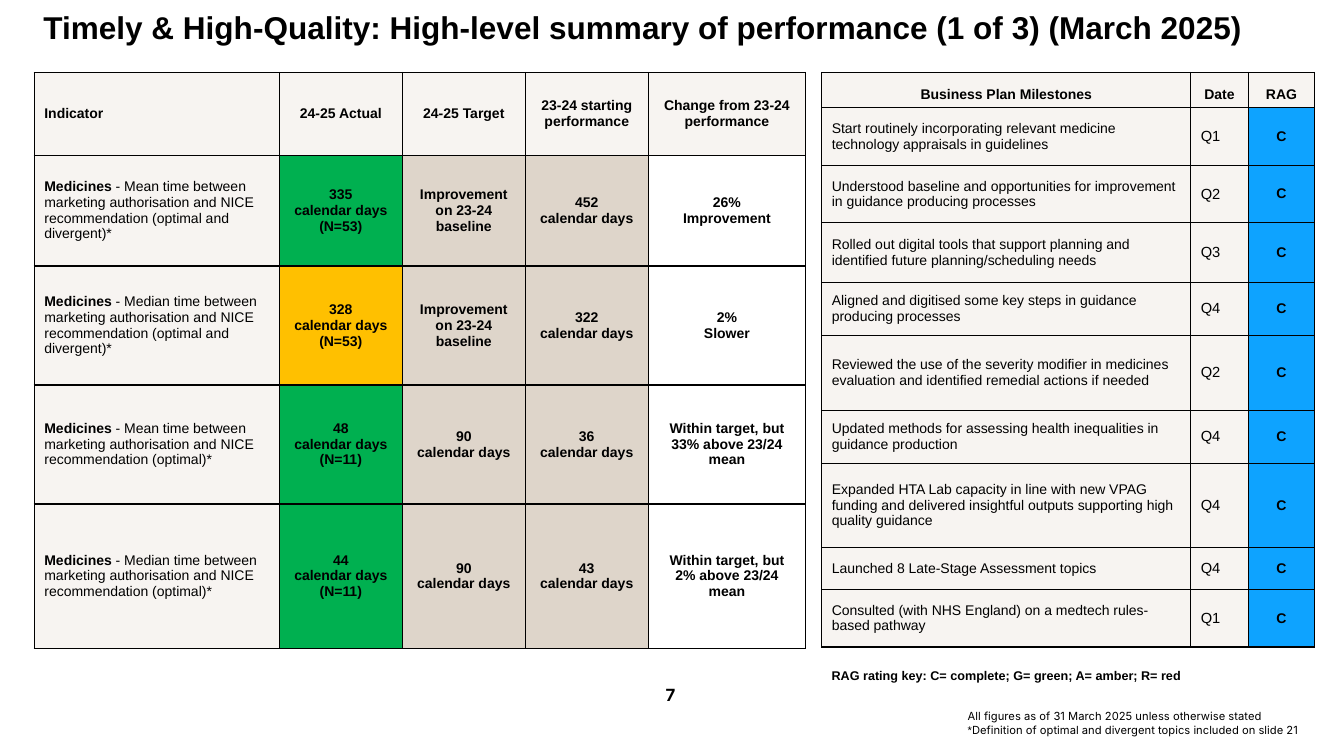
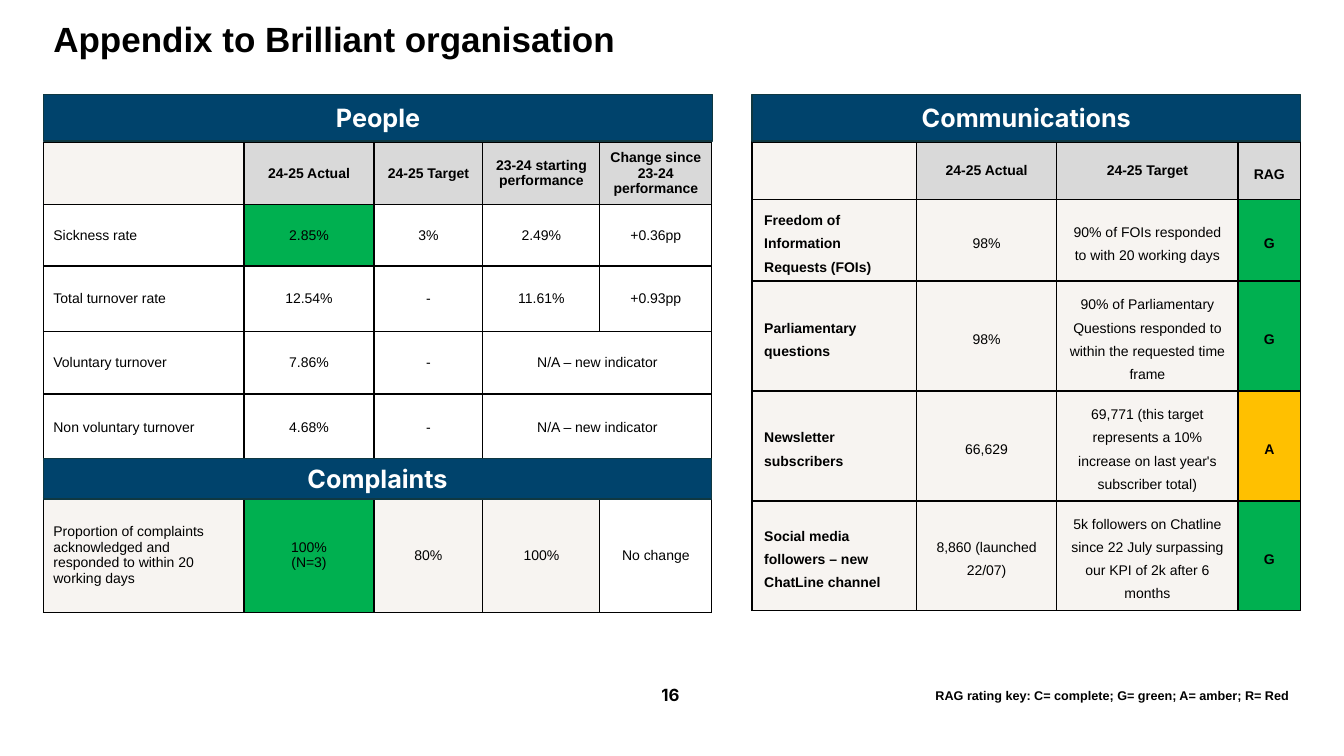
from lxml import etree
from pptx import Presentation
from pptx.dml.color import RGBColor
from pptx.enum.shapes import MSO_SHAPE
from pptx.enum.text import MSO_ANCHOR, MSO_AUTO_SIZE, PP_ALIGN
from pptx.oxml.ns import qn
from pptx.util import Inches, Pt

LEFT, CENTER = PP_ALIGN.LEFT, PP_ALIGN.CENTER
TOP, MIDDLE, BOTTOM = MSO_ANCHOR.TOP, MSO_ANCHOR.MIDDLE, MSO_ANCHOR.BOTTOM
NO_FIT = MSO_AUTO_SIZE.NONE
RECTANGLE = MSO_SHAPE.RECTANGLE

BLACK = RGBColor(0x00, 0x00, 0x00)
WHITE = RGBColor(0xFF, 0xFF, 0xFF)
PALE = RGBColor(0xF7, 0xF4, 0xF1)
BEIGE = RGBColor(0xDE, 0xD5, 0xCA)
GREY = RGBColor(0xD9, 0xD9, 0xD9)
GREEN = RGBColor(0x00, 0xB0, 0x50)
AMBER = RGBColor(0xFF, 0xC0, 0x00)
BLUE = RGBColor(0x0E, 0xA3, 0xFF)
NAVY = RGBColor(0x00, 0x43, 0x6C)
NAVY_EDGE = RGBColor(0x0F, 0x38, 0x42)
RAG_FILLS = {"C": BLUE, "G": GREEN, "A": AMBER}

BODY_FONT, ACCENT_FONT = "Arial", "Inter"

PLAIN = {"align": LEFT, "bold": False}
PLAIN_CENTER = {"align": CENTER, "bold": False}
BOLD = {"align": LEFT, "bold": True}
BOLD_CENTER = {"align": CENTER, "bold": True}
BOLD_BOTTOM = {**BOLD_CENTER, "anchor": BOTTOM}
SPACED = {"line_spacing": Pt(16.5), "margins": (0.12, 0.06)}


def indicator(measure, topics):
    return [("Medicines", True),
            (f" - {measure} time between marketing authorisation and NICE "
             f"recommendation ({topics})*", False)]


PERFORMANCE = {
    "at": (0.34, 0.72),
    "widths": [2.43, 1.22, 1.22, 1.22, 1.56],
    "heights": [0.82, 1.1, 1.18, 1.18, 1.43],
    "rows": [
        ["Indicator", "24-25 Actual", "24-25 Target",
         "23-24 starting performance", "Change from 23-24 performance"],
        [indicator("Mean", "optimal and divergent"), "335\ncalendar days\n(N=53)",
         "Improvement on 23-24 baseline", "452\ncalendar days", "26%\nImprovement"],
        [indicator("Median", "optimal and divergent"), "328\ncalendar days\n(N=53)",
         "Improvement on 23-24 baseline", "322\ncalendar days", "2%\nSlower"],
        [indicator("Mean", "optimal"), "48\ncalendar days\n(N=11)",
         "90\ncalendar days", "36\ncalendar days",
         "Within target, but 33% above 23/24 mean"],
        [indicator("Median", "optimal"), "44\ncalendar days\n(N=11)",
         "90\ncalendar days", "43\ncalendar days",
         "Within target, but 2% above 23/24 mean"],
    ],
    "fills": [[PALE] * 5] + [[PALE, status, BEIGE, BEIGE, WHITE]
                             for status in (GREEN, AMBER, GREEN, GREEN)],
    "header": [BOLD] + [BOLD_CENTER] * 4,
    "body": [BOLD] + [BOLD_CENTER] * 4,
}

MILESTONE_ROWS = [
    ["Business Plan Milestones", "Date", "RAG"],
    ["Start routinely incorporating relevant medicine technology appraisals in guidelines", "Q1", "C"],
    ["Understood baseline and opportunities for improvement in guidance producing processes", "Q2", "C"],
    ["Rolled out digital tools that support planning and identified future planning/scheduling needs", "Q3", "C"],
    ["Aligned and digitised some key steps in guidance producing processes", "Q4", "C"],
    ["Reviewed the use of the severity modifier in medicines evaluation and identified remedial "
     "actions if needed", "Q2", "C"],
    ["Updated methods for assessing health inequalities in guidance production", "Q4", "C"],
    ["Expanded HTA Lab capacity in line with new VPAG funding and delivered insightful outputs "
     "supporting high quality guidance", "Q4", "C"],
    ["Launched 8 Late-Stage Assessment topics", "Q4", "C"],
    ["Consulted (with NHS England) on a medtech rules-based pathway", "Q1", "C"],
]
MILESTONES = {
    "at": (8.15, 0.72),
    "widths": [3.66, 0.57, 0.66],
    "heights": [0.35, 0.57, 0.57, 0.59, 0.53, 0.74, 0.53, 0.83, 0.42, 0.57],
    "rows": MILESTONE_ROWS,
    "fills": [[PALE, PALE, RAG_FILLS.get(row[-1], PALE)] for row in MILESTONE_ROWS],
    "header": [BOLD_BOTTOM] * 3,
    "body": [PLAIN, {**PLAIN, "size": 10.5}, BOLD_CENTER],
}

PEOPLE = {
    "at": (0.43, 1.41),
    "widths": [1.99, 1.29, 1.08, 1.16, 1.11],
    "heights": [0.62, 0.61, 0.65, 0.62, 0.66, 0.37, 1.14],
    "rows": [
        ["", "24-25 Actual", "24-25 Target", "23-24 starting performance",
         "Change since 23-24 performance"],
        ["Sickness rate", "2.85%", "3%", "2.49%", "+0.36pp"],
        ["Total turnover rate", "12.54%", "-", "11.61%", "+0.93pp"],
        ["Voluntary turnover", "7.86%", "-", "N/A – new indicator", ""],
        ["Non voluntary turnover", "4.68%", "-", "N/A – new indicator", ""],
        [""] * 5,
        ["Proportion of complaints acknowledged and responded to within 20 working days",
         "100%\n(N=3)", "80%", "100%", "No change"],
    ],
    "fills": [[PALE] + [GREY] * 4,
              [WHITE, GREEN] + [WHITE] * 3,
              *[[WHITE] * 5] * 3,
              [PALE] * 5,
              [PALE, GREEN, PALE, PALE, WHITE]],
    "header": [BOLD_CENTER] * 5,
    "body": [PLAIN] + [PLAIN_CENTER] * 4,
    "merges": [((3, 3), (3, 4)), ((4, 3), (4, 4)), ((5, 0), (5, 4))],
}

COMMUNICATION_ROWS = [
    ["", "24-25 Actual", "24-25 Target", "RAG"],
    ["Freedom of Information Requests (FOIs)", "98%",
     "90% of FOIs responded to with 20 working days", "G"],
    ["Parliamentary questions", "98%",
     "90% of Parliamentary Questions responded to within the requested time frame", "G"],
    ["Newsletter subscribers", "66,629",
     "69,771 (this target represents a 10% increase on last year's subscriber total)", "A"],
    ["Social media followers – new ChatLine channel", "8,860 (launched 22/07)",
     "5k followers on Chatline since 22 July surpassing our KPI of 2k after 6 months", "G"],
]
COMMUNICATIONS = {
    "at": (7.46, 1.41),
    "widths": [1.63, 1.39, 1.8, 0.62],
    "heights": [0.57, 0.81, 1.09, 1.09, 1.09],
    "rows": COMMUNICATION_ROWS,
    "fills": [[PALE] + [GREY] * 3] + [[PALE] * 3 + [RAG_FILLS[row[-1]]]
                                      for row in COMMUNICATION_ROWS[1:]],
    "header": [BOLD_CENTER] * 3 + [{**BOLD_CENTER, **SPACED}],
    "body": [{**style, **SPACED} for style in (BOLD, PLAIN_CENTER, PLAIN_CENTER, BOLD_CENTER)],
    "border": 1.25,
}

RAG_KEY = "RAG rating key: C= complete; G= green; A= amber; R= "
FOOTNOTES = [
    [("All figures as of 31 March 2025 unless otherwise stated", ACCENT_FONT)],
    [("*", BODY_FONT), ("Definition of optimal and divergent topics included on slide 21", ACCENT_FONT)],
]

SLIDES = [
    {
        "title": "Timely & High-Quality: High-level summary of performance (1 of 3) (March 2025)",
        "title_box": (0.33, 0.07, 12.98, 0.82), "title_size": 22.5,
        "number": "7",
        "tables": [PERFORMANCE, MILESTONES],
        "bands": [],
        "key": (RAG_KEY + "red", (8.15, 6.58, 4.47, 0.25)),
        "footnotes": FOOTNOTES,
    },
    {
        "title": "Appendix to Brilliant organisation",
        "title_box": (0.43, 0.17, 12.11, 0.72), "title_size": 25,
        "number": "16",
        "tables": [PEOPLE, COMMUNICATIONS],
        "bands": [("People", (0.43, 0.94, 6.64, 0.46)),
                  ("Complaints", (0.43, 4.55, 6.63, 0.4)),
                  ("Communications", (7.46, 0.94, 5.44, 0.46))],
        "key": (RAG_KEY + "Red", (9.18, 6.78, 3.81, 0.25)),
        "footnotes": [],
    },
]


def box(measures):
    return [Inches(measure) for measure in measures]


def set_all(target, values):
    for name, value in values.items():
        setattr(target, name, value)


def add_run(paragraph, text, size, bold=False, font=BODY_FONT, color=BLACK):
    run = paragraph.add_run()
    run.text = text
    set_all(run.font, {"name": font, "size": Pt(size), "bold": bold})
    run.font.color.rgb = color


def add_border(cell, width):
    properties = cell._tc.get_or_add_tcPr()
    for side in ("lnL", "lnR", "lnT", "lnB"):
        edge = etree.SubElement(properties, qn(f"a:{side}"), w=str(Pt(width)))
        fill = etree.SubElement(edge, qn("a:solidFill"))
        etree.SubElement(fill, qn("a:srgbClr"), val=str(BLACK))


def fill_cell(cell, content, fill, style, border):
    add_border(cell, border)
    cell.fill.solid()
    cell.fill.fore_color.rgb = fill
    side, edge = style.get("margins", (0.1, 0.05))
    set_all(cell, {"vertical_anchor": style.get("anchor", MIDDLE),
                   "margin_left": Inches(side), "margin_right": Inches(side),
                   "margin_top": Inches(edge), "margin_bottom": Inches(edge)})
    size = style.get("size", 10)
    frame = cell.text_frame
    if not content:
        etree.SubElement(frame.paragraphs[0]._p, qn("a:endParaRPr"), sz=str(size * 100))
        return
    if isinstance(content, str):
        lines = [[(line, style["bold"])] for line in content.split("\n")]
    else:
        lines = [content]
    for index, line in enumerate(lines):
        paragraph = frame.add_paragraph() if index else frame.paragraphs[0]
        set_all(paragraph, {"alignment": style["align"],
                            "line_spacing": style.get("line_spacing")})
        for text, bold in line:
            add_run(paragraph, text, size, bold)


def add_grid(slide, grid):
    widths, heights = grid["widths"], grid["heights"]
    table = slide.shapes.add_table(
        len(heights), len(widths), *box((*grid["at"], sum(widths), sum(heights)))).table
    set_all(table, {"first_row": False, "horz_banding": False})
    for column, width in zip(table.columns, widths):
        column.width = Inches(width)
    for row, height in zip(table.rows, heights):
        row.height = Inches(height)
    for r, (contents, fills) in enumerate(zip(grid["rows"], grid["fills"])):
        styles = grid["body"] if r else grid["header"]
        for c, (content, fill, style) in enumerate(zip(contents, fills, styles)):
            fill_cell(table.cell(r, c), content, fill, style, grid.get("border", 1))
    for first, last in grid.get("merges", []):
        table.cell(*first).merge(table.cell(*last))


def add_band(slide, heading, place):
    band = slide.shapes.add_shape(RECTANGLE, *box(place))
    band.shadow.inherit = False
    band.fill.solid()
    band.fill.fore_color.rgb = NAVY
    band.line.color.rgb = NAVY_EDGE
    band.line.width = Pt(1)
    band.text_frame.vertical_anchor = MIDDLE
    paragraph = band.text_frame.paragraphs[0]
    paragraph.alignment = CENTER
    add_run(paragraph, heading, 18, True, ACCENT_FONT, WHITE)


def add_note(slide, place, lines, size, bold=False, align=LEFT):
    frame = slide.shapes.add_textbox(*box(place)).text_frame
    frame.word_wrap = True
    for index, line in enumerate(lines):
        paragraph = frame.add_paragraph() if index else frame.paragraphs[0]
        paragraph.alignment = align
        for text, font in line:
            add_run(paragraph, text, size, bold, font)


def add_title(slide, text, place, size):
    title = slide.shapes.title
    set_all(title, dict(zip(("left", "top", "width", "height"), box(place))))
    set_all(title.text_frame, {"vertical_anchor": TOP, "word_wrap": True, "auto_size": NO_FIT})
    paragraph = title.text_frame.paragraphs[0]
    set_all(paragraph, {"alignment": LEFT, "line_spacing": 0.9})
    add_run(paragraph, text, size, True)


def main():
    deck = Presentation()
    deck.slide_width, deck.slide_height = box((13.33, 7.5))
    for page in SLIDES:
        slide = deck.slides.add_slide(deck.slide_layouts[5])
        add_title(slide, page["title"], page["title_box"], page["title_size"])
        for grid in page["tables"]:
            add_grid(slide, grid)
        for heading, place in page["bands"]:
            add_band(slide, heading, place)
        add_note(slide, (5.15, 6.74, 3, 0.4), [[(page["number"], ACCENT_FONT)]], 12, True, CENTER)
        key, place = page["key"]
        add_note(slide, place, [[(key, BODY_FONT)]], 9, True)
        if page["footnotes"]:
            add_note(slide, (9.5, 6.99, 3.7, 0.37), page["footnotes"], 8)
    deck.save("out.pptx")


if __name__ == "__main__":
    main()
